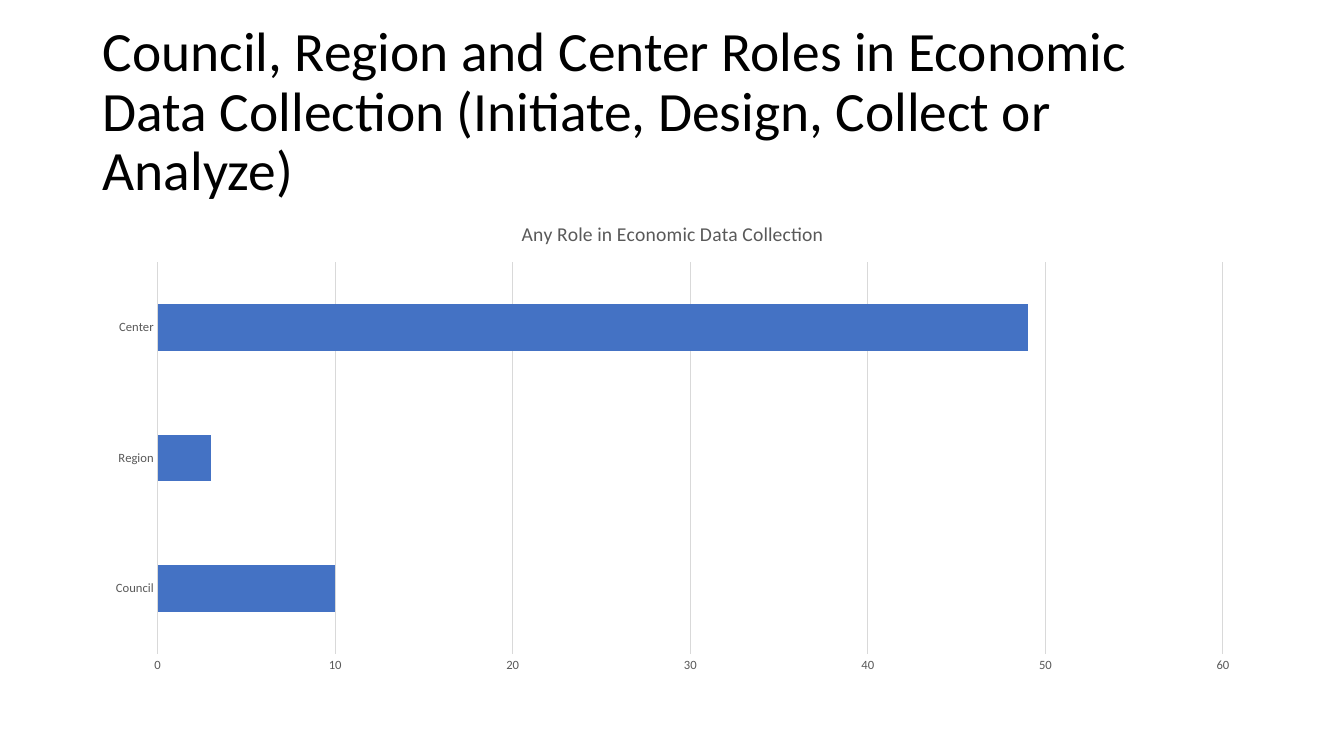
import pptx
import pptx.chart.data
import pptx.dml.color
import pptx.enum.chart
import pptx.enum.text
import pptx.util

WIDE, HIGH = pptx.util.Inches(13.33), pptx.util.Inches(7.5)
LEFT, SPAN = 0.069, 0.863  # shares of the slide's width
FONT = "Calibri"
GREY, PALE, BLUE = "595959", "D9D9D9", "4472C4"
ROLES = {"Council": 10, "Region": 3, "Center": 49}


def paint(color, code):
    color.rgb = pptx.dml.color.RGBColor.from_string(code)


def style(font, size, code):
    font.name = FONT
    font.size = pptx.util.Pt(size)
    font.bold = False
    paint(font.color, code)


def rule(line, code):
    line.width = pptx.util.Pt(0.75)
    paint(line.color, code)


def box(top, tall):
    """Left, top, width and height from shares of the slide."""
    return [round(n) for n in (LEFT * WIDE, top * HIGH, SPAN * WIDE, tall * HIGH)]


def add_title(slide, text):
    title = slide.shapes.title
    title.left, title.top, title.width, title.height = box(0.053, 0.193)
    frame = title.text_frame
    frame.text = text
    frame.word_wrap = True
    frame.auto_size = pptx.enum.text.MSO_AUTO_SIZE.NONE
    frame.vertical_anchor = pptx.enum.text.MSO_ANCHOR.MIDDLE
    para = frame.paragraphs[0]
    para.alignment = pptx.enum.text.PP_ALIGN.LEFT
    para.line_spacing = 0.9
    style(para.runs[0].font, 39.6, "000000")


def set_axis(axis):
    axis.major_tick_mark = pptx.enum.chart.XL_TICK_MARK.NONE
    axis.minor_tick_mark = pptx.enum.chart.XL_TICK_MARK.NONE
    style(axis.tick_labels.font, 9, GREY)


def add_bars(slide, text, values):
    data = pptx.chart.data.CategoryChartData()
    data.categories = list(values)
    data.add_series("Series 1", list(values.values()))
    kind = pptx.enum.chart.XL_CHART_TYPE.BAR_CLUSTERED
    chart = slide.shapes.add_chart(kind, *box(0.267, 0.635), data).chart
    style(chart.font, 10, "000000")
    chart.has_legend = False

    # Chart title
    chart.has_title = True
    frame = chart.chart_title.text_frame
    frame.text = text
    style(frame.paragraphs[0].runs[0].font, 14, GREY)
    chart.chart_title.include_in_layout = False

    # Axes
    names, scale = chart.category_axis, chart.value_axis
    set_axis(names)
    set_axis(scale)
    names.has_major_gridlines = False
    rule(names.format.line, PALE)
    scale.format.line.fill.background()
    scale.has_major_gridlines = True
    rule(scale.major_gridlines.format.line, PALE)
    scale.minimum_scale, scale.maximum_scale, scale.major_unit = 0, 60, 10

    # Bars
    plot = chart.plots[0]
    plot.gap_width = 182
    plot.vary_by_categories = False
    fill = plot.series[0].format.fill
    fill.solid()
    paint(fill.fore_color, BLUE)


def main():
    deck = pptx.Presentation()
    deck.slide_width, deck.slide_height = WIDE, HIGH
    slide = deck.slides.add_slide(deck.slide_layouts[5])
    add_title(slide, "Council, Region and Center Roles in Economic Data "
                     "Collection (Initiate, Design, Collect or Analyze)")
    add_bars(slide, "Any Role in Economic Data Collection", ROLES)
    deck.save("out.pptx")


if __name__ == "__main__":
    main()
